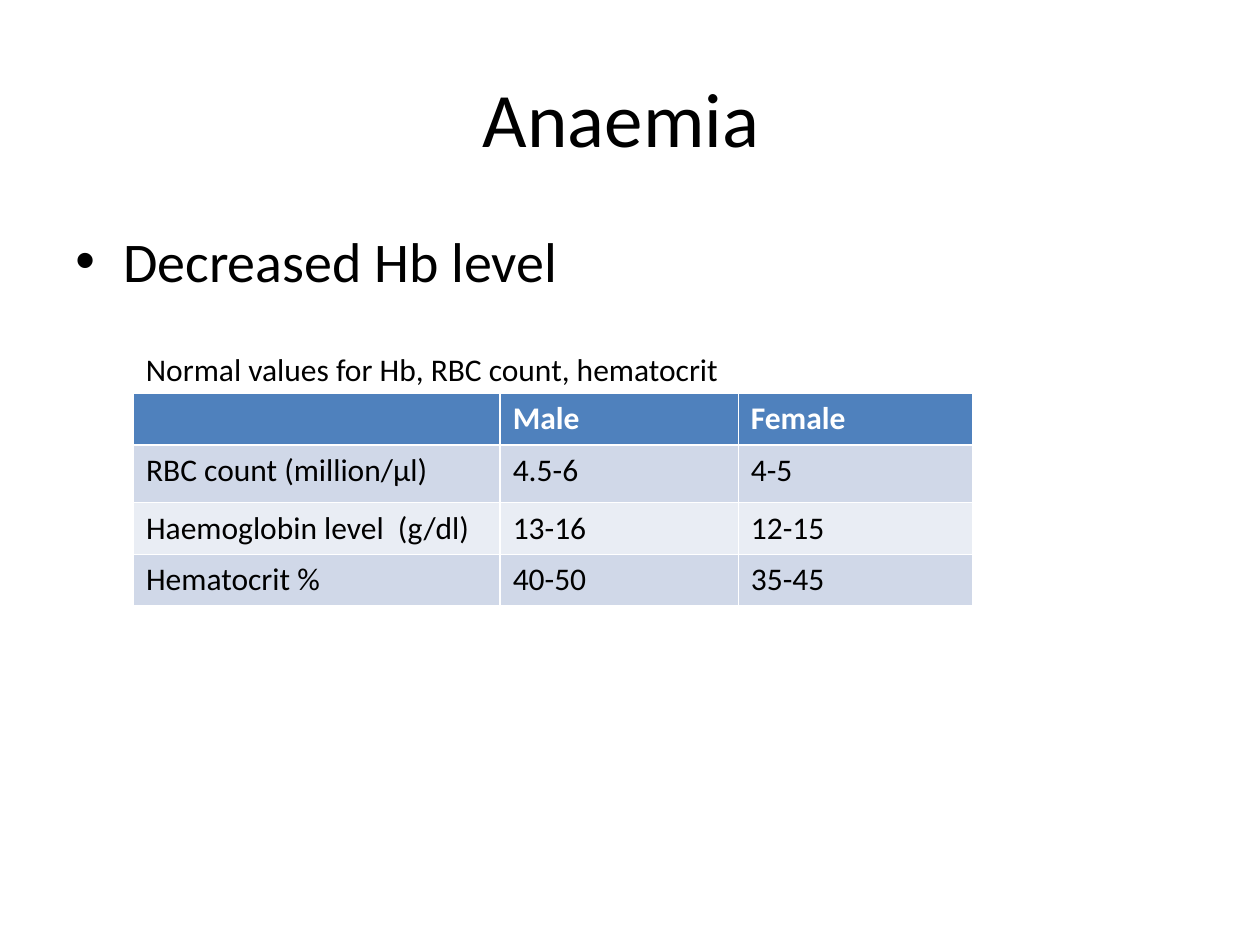
from pptx import Presentation
from pptx.dml.color import RGBColor
from pptx.enum.text import MSO_ANCHOR as Anchor, PP_ALIGN as Align
from pptx.oxml.ns import qn
from pptx.util import Inches, Pt
from lxml import etree

BLACK = RGBColor(0x00, 0x00, 0x00)
WHITE = RGBColor(0xFF, 0xFF, 0xFF)
HEADER_BLUE = RGBColor(0x4F, 0x81, 0xBD)
BAND_DARK = RGBColor(0xD0, 0xD8, 0xE8)
BAND_LIGHT = RGBColor(0xE9, 0xED, 0xF4)


def write(paragraph, text, size, color=BLACK, bold=False):
    run = paragraph.add_run()
    run.text = text
    run.font.color.rgb = color
    for key, value in {"name": "Calibri", "size": Pt(size), "bold": bold}.items():
        setattr(run.font, key, value)


def add_text(box, text, size, frame_format, paragraph_format):
    frame = slide.shapes.add_textbox(*map(Inches, box)).text_frame
    for key, value in {"word_wrap": True, **frame_format}.items():
        setattr(frame, key, value)
    paragraph = frame.paragraphs[0]
    for key, value in paragraph_format.items():
        setattr(paragraph, key, value)
    write(paragraph, text, size)
    return paragraph


deck = Presentation()
deck.slide_width, deck.slide_height = Inches(10), Inches(7.5)
slide = deck.slides.add_slide(deck.slide_layouts[6])

add_text((0.5, 0.3, 9, 1.25), "Anaemia ", 44,
         {"vertical_anchor": Anchor.MIDDLE}, {"alignment": Align.CENTER})

finding = add_text((0.5, 1.75, 9, 4.95), "Decreased Hb level", 32,
                   {}, {"space_before": Pt(6.4)})
properties = finding._p.get_or_add_pPr()
properties.set("marL", str(Inches(0.38)))
properties.set("indent", str(Inches(-0.38)))
etree.SubElement(properties, qn("a:buFont")).set("typeface", "Arial")
etree.SubElement(properties, qn("a:buChar")).set("char", "•")

normal_values = [
    ("", "Male", "Female"),
    ("RBC count (million/μl)", "4.5-6", "4-5"),
    ("Haemoglobin level  (g/dl)", "13-16", "12-15"),
    ("Hematocrit %", "40-50", "35-45"),
]
column_widths = [2.91, 1.89, 1.86]
row_heights = [0.41, 0.46, 0.41, 0.41]
row_fills = [HEADER_BLUE, BAND_DARK, BAND_LIGHT, BAND_DARK]

values_table = slide.shapes.add_table(
    len(normal_values), len(column_widths),
    Inches(1.06), Inches(3.12), Inches(6.67), Inches(1.68)).table
for column, width in zip(values_table.columns, column_widths):
    column.width = Inches(width)
for row, height, fill, values in zip(values_table.rows, row_heights, row_fills, normal_values):
    row.height = Inches(height)
    is_header = fill == HEADER_BLUE
    for cell, value in zip(row.cells, values):
        cell.fill.solid()
        cell.fill.fore_color.rgb = fill
        if value:
            write(cell.text_frame.paragraphs[0], value, 18,
                  WHITE if is_header else BLACK, is_header)

add_text((1.06, 2.73, 6.69, 0.4), "Normal values for Hb, RBC count, hematocrit", 18, {}, {})

deck.save("out.pptx")
